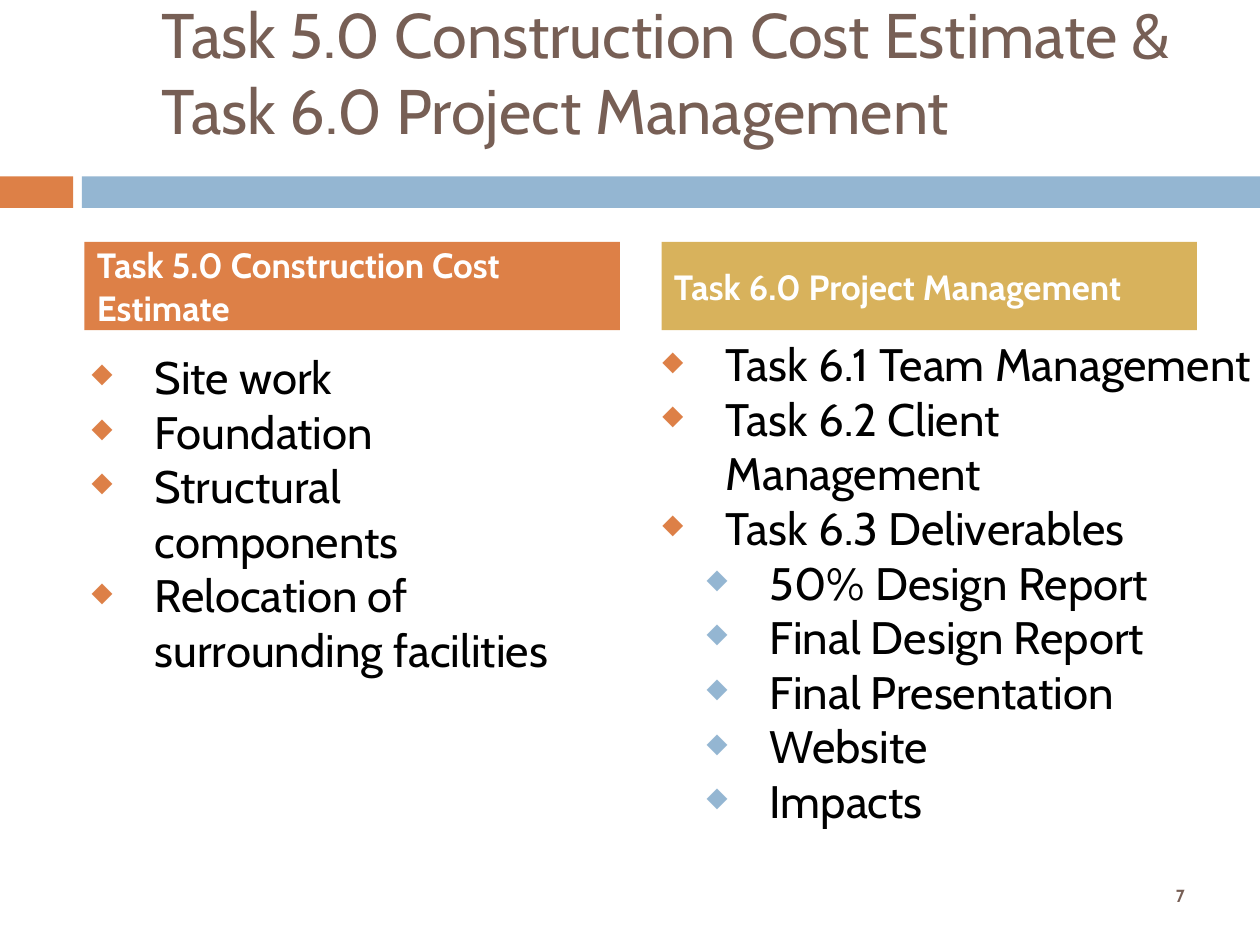
from dataclasses import dataclass
from lxml.etree import SubElement
from pptx import Presentation
from pptx.dml.color import RGBColor
from pptx.enum.shapes import MSO_SHAPE
from pptx.enum.text import MSO_ANCHOR, PP_ALIGN
from pptx.oxml.ns import qn
from pptx.util import Inches, Pt


@dataclass
class Theme:
    font: str = "Cabin"
    orange: str = "DD8047"
    blue: str = "94B6D2"
    gold: str = "D8B25C"
    brown: str = "775F55"
    black: str = "000000"
    white: str = "FFFFFF"
    title: int = 36
    body: int = 26
    head: int = 20
    small: int = 10


theme = Theme()
deck = Presentation()
deck.slide_width, deck.slide_height = Inches(10), Inches(7.5)
slide = deck.slides.add_slide(deck.slide_layouts[6])


def add_box(area, fill=None):
    place = [Inches(n) for n in area]
    if fill:
        box = slide.shapes.add_shape(MSO_SHAPE.RECTANGLE, *place)
        box.shadow.inherit = False
        box.fill.solid()
        box.fill.fore_color.rgb = RGBColor.from_string(fill)
        box.line.fill.background()
    else:
        box = slide.shapes.add_textbox(*place)
    box.text_frame.word_wrap = True
    box.text_frame.vertical_anchor = MSO_ANCHOR.MIDDLE
    return box.text_frame


def write(para, text, size, color, bold=False, align=PP_ALIGN.LEFT):
    para.text = text
    para.alignment = align
    para.font.name = theme.font
    para.font.size = Pt(size)
    para.font.bold = bold
    para.font.color.rgb = RGBColor.from_string(color)


add_box((0, 1.4, 0.58, 0.25), theme.orange)
add_box((0.65, 1.4, 9.35, 0.25), theme.blue)

title = add_box((0.58, 0.39, 8.92, 0.95))
title.margin_left, title.margin_right = Inches(0.7), Inches(0.1)
title.margin_top, title.margin_bottom = Inches(0.1), Inches(0.7)
write(title.paragraphs[0],
      "Task 5.0 Construction Cost Estimate & Task 6.0 Project Management",
      theme.title, theme.brown)

levels = [(0.75, theme.orange), (1.1, theme.blue)]
lists = [
    ((0.38, 2.67, 4.43, 4.12), 0.1, [
        (0, "Site work"),
        (0, "Foundation"),
        (0, "Structural components"),
        (0, "Relocation of surrounding facilities"),
    ]),
    ((4.91, 2.62, 5.16, 4.28), 0.05, [
        (0, "Task 6.1 Team Management"),
        (0, "Task 6.2 Client Management"),
        (0, "Task 6.3 Deliverables"),
        (1, "50% Design Report"),
        (1, "Final Design Report"),
        (1, "Final Presentation"),
        (1, "Website"),
        (1, "Impacts"),
    ]),
]
for area, inset, items in lists:
    frame = add_box(area)
    frame.vertical_anchor = MSO_ANCHOR.TOP
    frame.margin_top = frame.margin_bottom = Inches(inset)
    for row, (level, text) in enumerate(items):
        para = frame.add_paragraph() if row else frame.paragraphs[0]
        indent, color = levels[level]
        para.level = level
        props = para._p.get_or_add_pPr()
        props.set("marL", str(Inches(indent)))
        props.set("indent", str(Inches(-0.5)))
        tint = SubElement(props, qn("a:buClr"))
        SubElement(tint, qn("a:srgbClr"), val=color)
        SubElement(props, qn("a:buSzPct"), val="60000")
        SubElement(props, qn("a:buChar"), char="◆")
        write(para, text, theme.body, theme.black)

heads = [
    (0.67, theme.orange, "Task 5.0 Construction Cost Estimate"),
    (5.25, theme.gold, "Task 6.0 Project Management"),
]
for left, fill, text in heads:
    frame = add_box((left, 1.92, 4.25, 0.7), fill)
    write(frame.paragraphs[0], text, theme.head, theme.white, True)

number = add_box((8.92, 6.97, 0.58, 0.27))
write(number.paragraphs[0], "7", theme.small, theme.brown, True, PP_ALIGN.RIGHT)

deck.save("out.pptx")
